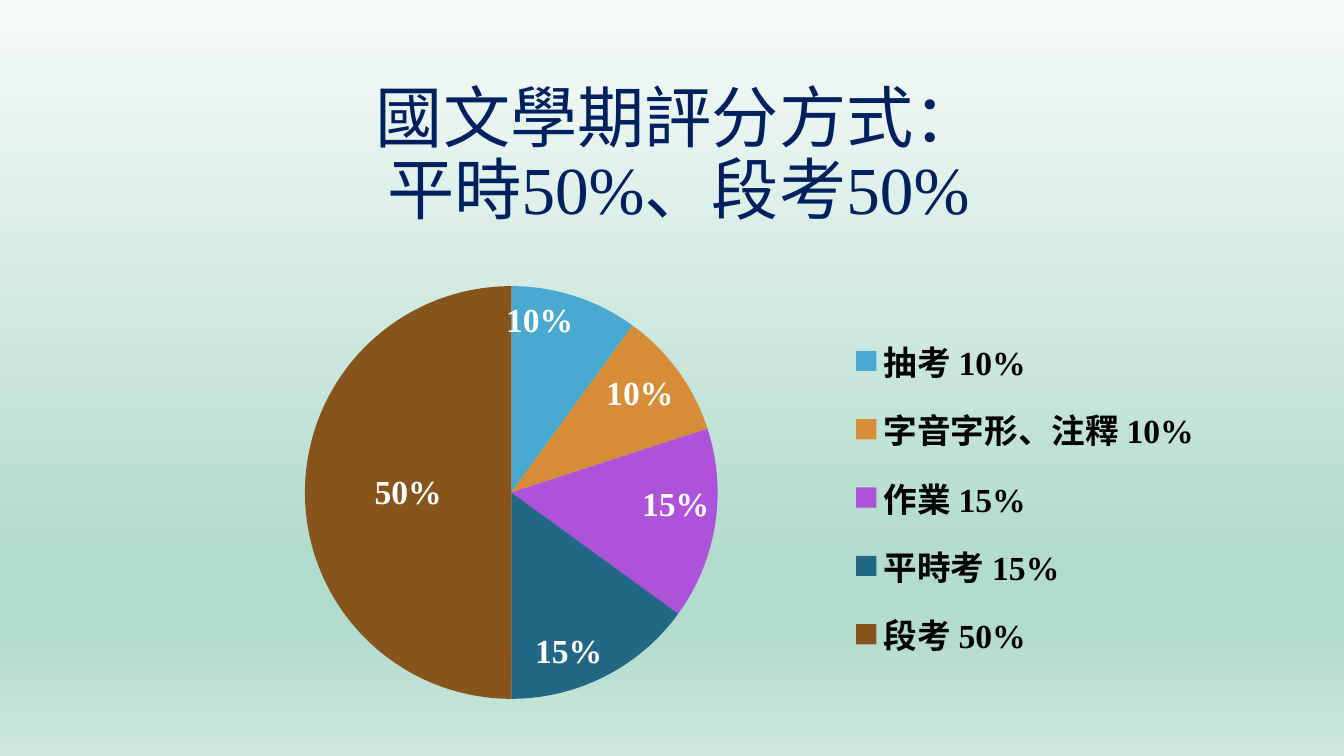
from lxml import etree
from pptx import Presentation
from pptx import util as u
from pptx.chart import data as cd
from pptx.dml.color import RGBColor
from pptx.enum import chart as ec, text
from pptx.oxml import parse_xml
from pptx.oxml.ns import nsdecls, qn

FONT = "Times New Roman"
BACKGROUND = [(0, "F6FBF9"), (74, "B2DCCD"), (83, "B2DCCD"), (100, "CBE8DD")]
GRADES = [
    ("抽考 10%", 10, "48A8D0"),
    ("字音字形、注釋 10%", 10, "D78D38"),
    ("作業 15%", 15, "AE52D9"),
    ("平時考 15%", 15, "226886"),
    ("段考 50%", 50, "87551B"),
]


def rgb(value):
    return RGBColor.from_string(value)


def set_font(font, size, color, bold=False):
    font.name = FONT
    font.size = u.Pt(size)
    font.bold = bold
    font.color.rgb = rgb(color)


def set_background(s, stops):
    fill = s.background.fill
    fill.gradient()
    fill.gradient_angle = 270
    gs_list = s.element.find(".//" + qn("a:gsLst"))
    for gs in list(gs_list):
        gs_list.remove(gs)
    for position, color in stops:
        gs = etree.SubElement(gs_list, qn("a:gs"), pos=str(position * 1000))
        etree.SubElement(gs, qn("a:srgbClr"), val=color)


def set_layout(element, x, y, w, h, inner=False):
    for old in element.findall(qn("c:layout")):
        element.remove(old)
    target = '<c:layoutTarget val="inner"/>' if inner else ""
    layout = parse_xml(
        f'<c:layout {nsdecls("c")}><c:manualLayout>{target}'
        '<c:xMode val="edge"/><c:yMode val="edge"/>'
        f'<c:x val="{x}"/><c:y val="{y}"/><c:w val="{w}"/><c:h val="{h}"/>'
        '</c:manualLayout></c:layout>')
    position = element.find(qn("c:legendPos"))
    if position is None:
        element.insert(0, layout)
    else:
        position.addnext(layout)


def add_title(s, x, y, w, h, lines):
    tf = s.shapes.add_textbox(u.Pt(x), u.Pt(y), u.Pt(w), u.Pt(h)).text_frame
    tf.word_wrap = True
    tf.vertical_anchor = text.MSO_ANCHOR.MIDDLE
    p = tf.paragraphs[0]
    p.alignment = text.PP_ALIGN.CENTER
    p.line_spacing = 0.9
    for i, line in enumerate(lines):
        if i:
            p.add_line_break()
        r = p.add_run()
        r.text = line
        set_font(r.font, 48, "002060")


def add_grade_pie(s, x, y, w, h, grades):
    data = cd.CategoryChartData()
    data.categories = [name for name, _, _ in grades]
    data.add_series("Series 1", [value for _, value, _ in grades])
    chart = s.shapes.add_chart(ec.XL_CHART_TYPE.PIE, u.Pt(x), u.Pt(y),
                               u.Pt(w), u.Pt(h), data).chart
    set_font(chart.font, 24, "000000", True)
    chart.has_title = False
    chart.has_legend = True
    legend = chart.legend
    legend.position = ec.XL_LEGEND_POSITION.RIGHT
    legend.include_in_layout = False
    set_font(legend.font, 24, "000000", True)

    plot = chart.plots[0]
    plot.vary_by_categories = True
    series = plot.series[0]
    for i, (_, _, color) in enumerate(grades):
        fill = series.points[i].format.fill
        fill.solid()
        fill.fore_color.rgb = rgb(color)

    labels = series.data_labels
    labels.show_percentage = True
    labels.show_value = False
    labels.position = ec.XL_LABEL_POSITION.INSIDE_END
    set_font(labels.font, 24, "FFFFFF", True)
    exam = series.points[len(grades) - 1].data_label
    set_font(exam.font, 24, "FFFFFF", True)
    exam.position = ec.XL_LABEL_POSITION.CENTER
    exam_label = labels._element.find(qn("c:dLbl"))
    exam_label.find(qn("c:showVal")).set("val", "0")
    exam_label.find(qn("c:showPercent")).set("val", "1")

    plot_area = chart.element.find(".//" + qn("c:plotArea"))
    set_layout(plot_area, 0.18, 0.1, 0.34, 0.81, inner=True)
    set_layout(chart.element.find(".//" + qn("c:legend")), 0.61, 0.16, 0.3, 0.71)


def main():
    prs = Presentation()
    prs.slide_width, prs.slide_height = u.Pt(960), u.Pt(540)
    s = prs.slides.add_slide(prs.slide_layouts[6])
    set_background(s, BACKGROUND)
    add_title(s, 76.5, 49, 816, 126, ["國文學期評分方式：", "平時50%、段考50%"])
    add_grade_pie(s, 52, 168, 895, 364, GRADES)
    prs.save("out.pptx")


if __name__ == "__main__":
    main()
